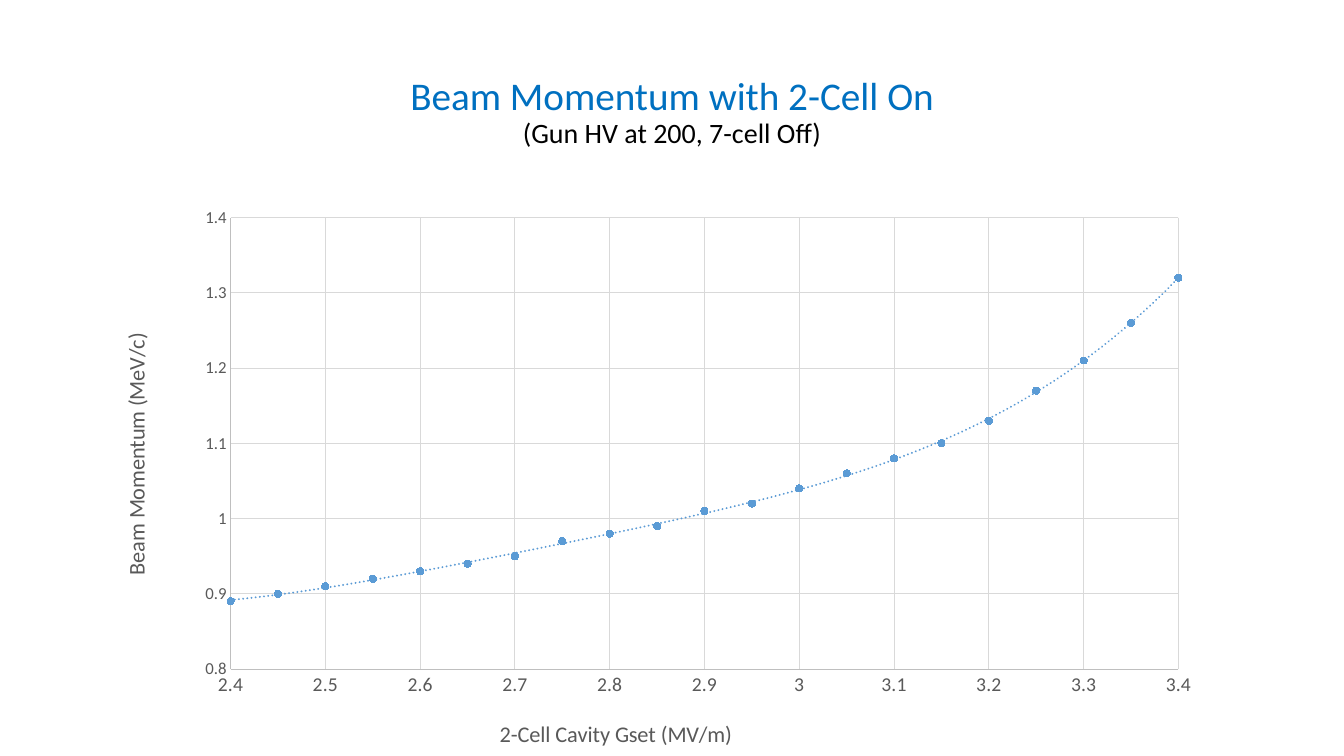
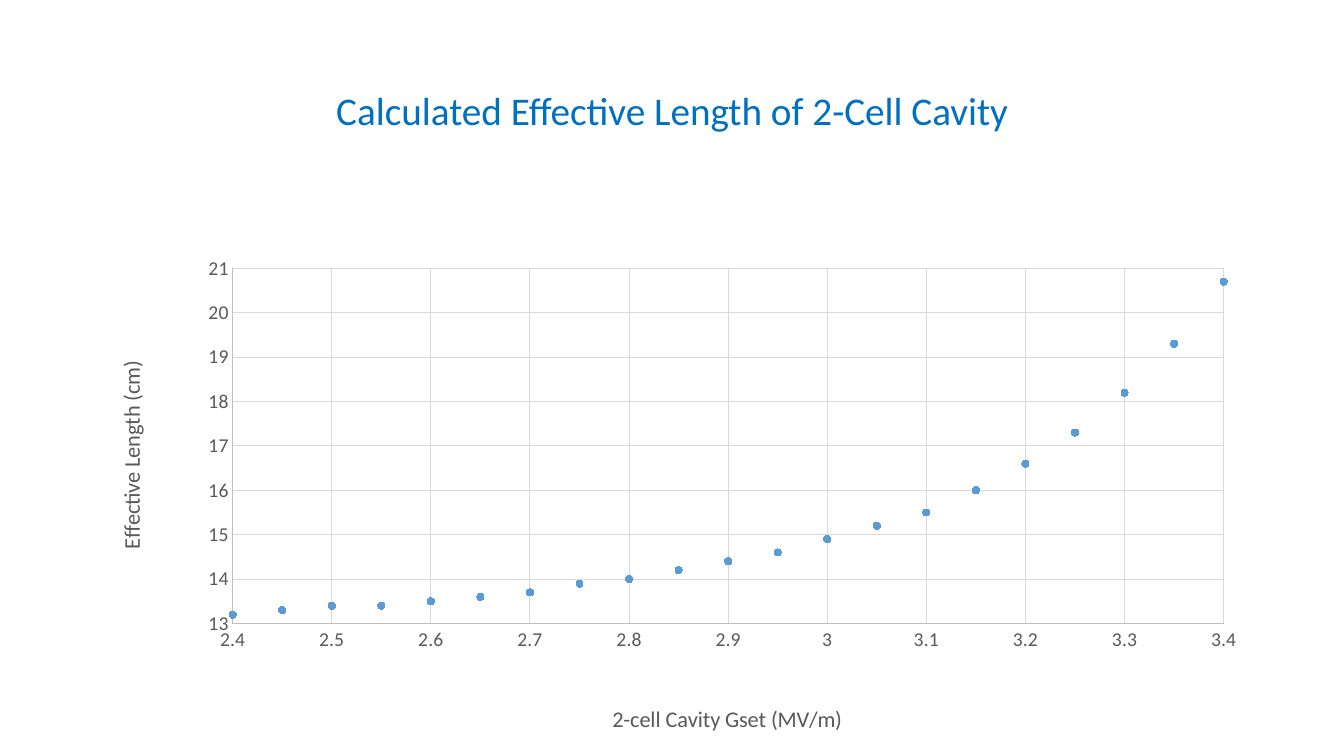
from dataclasses import dataclass
from typing import Optional

from lxml import etree
from pptx import Presentation
from pptx.chart.data import XyChartData
from pptx.dml.color import RGBColor
from pptx.enum.chart import XL_CHART_TYPE, XL_MARKER_STYLE, XL_TICK_MARK
from pptx.enum.text import MSO_ANCHOR, MSO_AUTO_SIZE, PP_ALIGN
from pptx.oxml import parse_xml
from pptx.oxml.ns import nsdecls, qn
from pptx.util import Cm, Pt

SCATTER = XL_CHART_TYPE.XY_SCATTER
CIRCLE = XL_MARKER_STYLE.CIRCLE
NO_TICK = XL_TICK_MARK.NONE
CENTER = PP_ALIGN.CENTER
MIDDLE = MSO_ANCHOR.MIDDLE
NO_FIT = MSO_AUTO_SIZE.NONE


@dataclass(frozen=True)
class Theme:
    font: str = "Calibri"
    title: str = "0070C0"
    ink: str = "000000"
    label: str = "595959"
    axis: str = "BFBFBF"
    grid: str = "D9D9D9"
    dot: str = "5B9BD5"
    head: int = 28
    sub: int = 20
    name: int = 16
    tick: int = 14
    small: int = 12
    base: int = 10
    hair: float = 0.75
    trend: float = 1.5
    marker: int = 5


@dataclass(frozen=True)
class Box:
    left: float
    top: float
    width: float
    height: float

    def lengths(self):
        return [Cm(v) for v in (self.left, self.top, self.width, self.height)]


THEME = Theme()


@dataclass(frozen=True)
class Axis:
    """Scale of an axis, with its title's place as shares of the chart."""
    name: str
    spot: tuple
    low: float
    high: Optional[float] = None
    size: int = THEME.tick
    turn: int = 0


HEAD = Box(2.33, 1.01, 29.21, 3.68)
GSET = [round(3.4 - 0.05 * i, 2) for i in range(21)]
MOMENTUM = [1.32, 1.26, 1.21, 1.17, 1.13, 1.1, 1.08, 1.06, 1.04, 1.02, 1.01,
            0.99, 0.98, 0.97, 0.95, 0.94, 0.93, 0.92, 0.91, 0.9, 0.89]
LENGTH = [20.7, 19.3, 18.2, 17.3, 16.6, 16, 15.5, 15.2, 14.9, 14.6, 14.4,
          14.2, 14, 13.9, 13.7, 13.6, 13.5, 13.4, 13.4, 13.3, 13.2]


def style(font, size, color):
    font.name, font.size, font.bold = THEME.font, Pt(size), False
    font.color.rgb = RGBColor.from_string(color)


def write(para, text, size=THEME.head, color=THEME.title):
    run = para.add_run()
    run.text = text
    style(run.font, size, color)


def stroke(line, color):
    line.color.rgb = RGBColor.from_string(color)
    line.width = Pt(THEME.hair)


def place(part, index, inner=False, **shares):
    """Give a chart part a manual layout, in shares of the chart."""
    for old in part.findall(qn("c:layout")):
        part.remove(old)
    layout = parse_xml(f"<c:layout {nsdecls('c')}><c:manualLayout/></c:layout>")
    fields = {"layoutTarget": "inner"} if inner else {}
    fields |= {"xMode": "edge", "yMode": "edge"} | shares
    for tag, value in fields.items():
        etree.SubElement(layout[0], qn(f"c:{tag}")).set("val", str(value))
    part.insert(index, layout)


# Title
def add_title(slide, box, text, note=None):
    title = slide.shapes.title
    title.left, title.top, title.width, title.height = box.lengths()
    frame = title.text_frame
    frame.word_wrap, frame.auto_size = True, NO_FIT
    frame.vertical_anchor = MIDDLE
    para = frame.paragraphs[0]
    para.alignment, para.line_spacing = CENTER, 0.9
    write(para, text)
    if note:
        para.add_line_break()
        write(para, note, size=THEME.sub, color=THEME.ink)


# Axis with grid, labels and title
def set_axis(axis, spec):
    axis.minimum_scale, axis.maximum_scale = spec.low, spec.high
    axis.major_tick_mark = axis.minor_tick_mark = NO_TICK
    axis.has_major_gridlines = True
    stroke(axis.major_gridlines.format.line, THEME.grid)
    stroke(axis.format.line, THEME.axis)
    labels = axis.tick_labels
    labels.number_format, labels.number_format_is_linked = "General", False
    style(labels.font, spec.size, THEME.label)
    axis.has_title = True
    frame = axis.axis_title.text_frame
    write(frame.paragraphs[0], spec.name, size=THEME.name, color=THEME.label)
    root = axis.axis_title._element
    body = root.find(".//" + qn("a:bodyPr"))
    body.set("rot", str(spec.turn * 60000))
    body.set("vert", "horz")
    place(root, 1, x=spec.spot[0], y=spec.spot[1])


# Dotted polynomial trend line
def add_trend(series, order):
    trend = parse_xml(
        f'<c:trendline {nsdecls("c", "a")}><c:spPr>'
        f'<a:ln w="{Pt(THEME.trend)}" cap="rnd">'
        f'<a:solidFill><a:srgbClr val="{THEME.dot}"/></a:solidFill>'
        '<a:prstDash val="sysDot"/></a:ln></c:spPr>'
        f'<c:trendlineType val="poly"/><c:order val="{order}"/>'
        '<c:dispRSqr val="0"/><c:dispEq val="0"/></c:trendline>')
    series._element.find(qn("c:xVal")).addprevious(trend)


# Scatter chart
def add_scatter(slide, box, values, across, up, plot, order=None):
    data = XyChartData()
    points = data.add_series("Series 1")
    for x, y in zip(GSET, values):
        points.add_data_point(x, y)
    chart = slide.shapes.add_chart(SCATTER, *box.lengths(), data).chart
    chart.has_title = chart.has_legend = False
    style(chart.font, THEME.base, THEME.ink)
    set_axis(chart.category_axis, across)
    set_axis(chart.value_axis, up)
    chart.plots[0].vary_by_categories = False
    series = chart.plots[0].series[0]
    series.format.line.fill.background()
    marker = series.marker
    marker.style, marker.size = CIRCLE, THEME.marker
    marker.format.fill.solid()
    marker.format.fill.fore_color.rgb = RGBColor.from_string(THEME.dot)
    stroke(marker.format.line, THEME.dot)
    if order:
        add_trend(series, order)
    area = chart._chartSpace.find(".//" + qn("c:plotArea"))
    place(area, 0, inner=True, **dict(zip("xywh", plot)))


def add_slide(deck, text, note=None, **chart):
    slide = deck.slides.add_slide(deck.slide_layouts[5])
    add_title(slide, HEAD, text, note)
    add_scatter(slide, **chart)


def main():
    deck = Presentation()
    deck.slide_width, deck.slide_height = Cm(33.87), Cm(19.05)
    # Momentum
    add_slide(
        deck, "Beam Momentum with 2-Cell On", "(Gun HV at 200, 7-cell Off)",
        box=Box(2.33, 3.96, 28.07, 15.09), values=MOMENTUM, order=4,
        across=Axis("2-Cell Cavity Gset (MV/m)", (0.362, 0.933), 2.4, 3.4),
        up=Axis("Beam Momentum (MeV/c)", (0.022, 0.288), 0.8,
                size=THEME.small, turn=-90),
        plot=(0.124, 0.101, 0.851, 0.755))
    # Effective length
    add_slide(
        deck, "Calculated Effective Length of 2-Cell Cavity",
        box=Box(2.33, 5.08, 29.21, 13.67), values=LENGTH,
        across=Axis("2-cell Cavity Gset (MV/m)", (0.445, 0.919), 2.4, 3.4),
        up=Axis("Effective Length (cm)", (0.017, 0.286), 13, 21, turn=-90),
        plot=(0.121, 0.123, 0.855, 0.655))
    deck.save("out.pptx")


if __name__ == "__main__":
    main()
